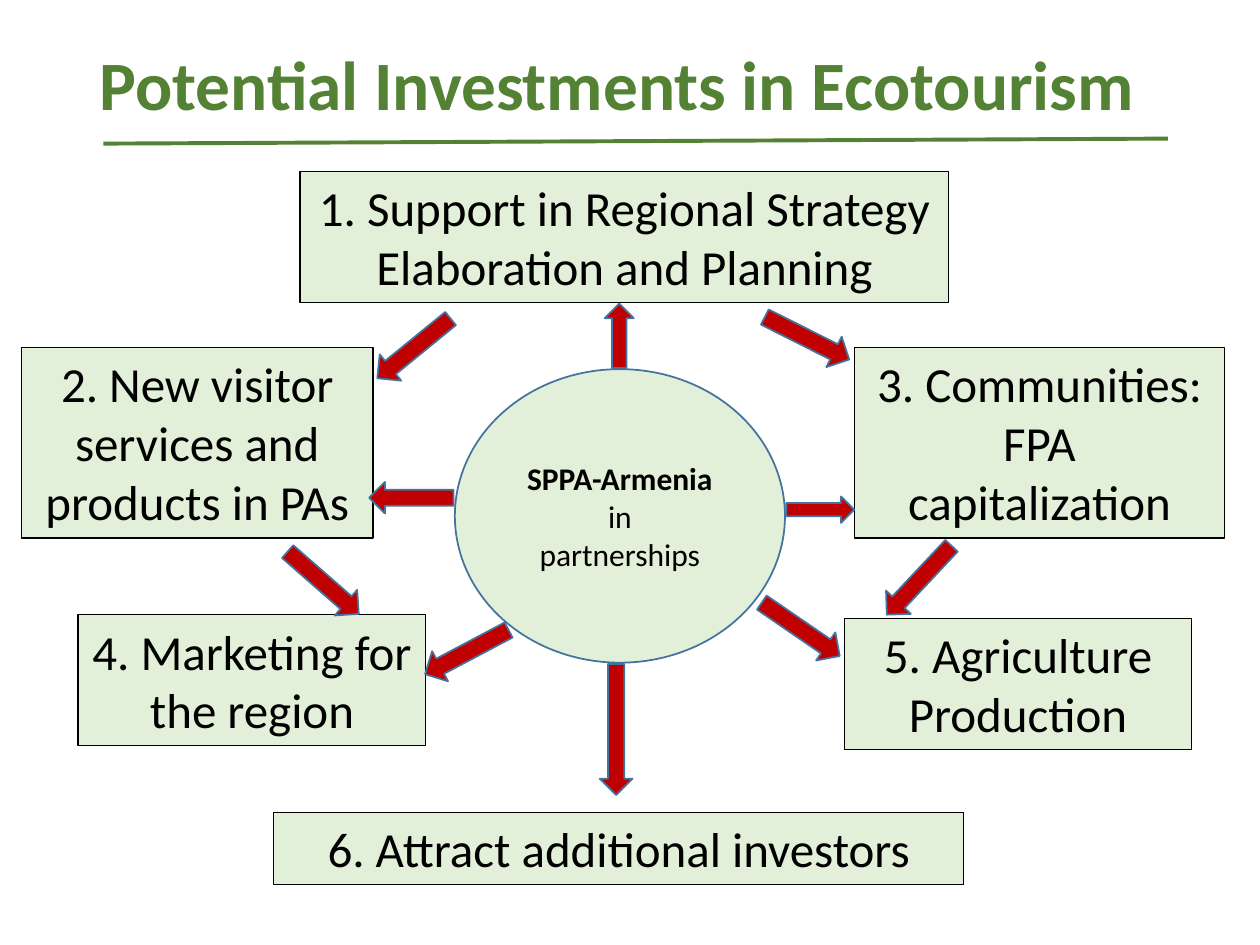
from dataclasses import dataclass

from lxml.etree import SubElement
from pptx import Presentation
from pptx.dml.color import RGBColor
from pptx.enum.shapes import MSO_CONNECTOR, MSO_SHAPE
from pptx.enum.text import MSO_ANCHOR, MSO_AUTO_SIZE, PP_ALIGN
from pptx.oxml.ns import qn
from pptx.util import Inches, Pt


@dataclass(frozen=True)
class Theme:
    """Colours, font and type sizes of the slide."""
    font: str = "Calibri"
    green: str = "548235"
    pale: str = "E2F0D9"
    black: str = "000000"
    red: str = "C00000"
    blue: str = "43739E"
    title_size: float = 39.6
    box_size: float = 28
    hub_size: float = 18


T = Theme()
CELL = Inches(0.1)

BOXES = [
    ("1. Support in Regional Strategy Elaboration and Planning", 23.8, 13.6, 51.5, 10.4),
    ("2. New visitor services and products in PAs", 1.7, 27.6, 27.9, 15.1),
    ("3. Communities: FPA capitalization", 67.8, 27.6, 29.4, 15.1),
    ("4. Marketing for the region", 6.2, 48.8, 27.6, 10.4),
    ("5. Agriculture Production", 67, 49.1, 27.6, 10.4),
    ("6. Attract additional investors", 21.7, 64.5, 54.8, 5.7),
]

ARROWS = [
    (49.15, 26.65, 5.1, 2.3, 270),
    (32.65, 39.5, 6.7, 2.5, 180),
    (65.1, 40.45, 5.4, 2.1, 0),
    (48.9, 57.9, 10.4, 2.6, 90),
]

SLANTED = [
    (32.85, 27.65, 140.8),
    (64.05, 26.85, 26.7),
    (25.65, 46.25, 41.2),
    (37.05, 51.75, 152.1),
    (72.95, 46.05, 133.2),
    (63.55, 49.95, 34.4),
]


def grid(*cells):
    """Turn grid columns and rows into lengths."""
    return [round(c * CELL) for c in cells]


def colour(name):
    """Return the colour for a hex value."""
    return RGBColor.from_string(name)


def style_text(p, size, tint, bold=False):
    """Format every run of a paragraph."""
    for r in p.runs:
        r.font.name = T.font
        r.font.size = Pt(size)
        r.font.bold = bold
        r.font.color.rgb = colour(tint)


def add_figure(s, kind, place, fill, line, width):
    """Add a filled and outlined preset shape."""
    sp = s.shapes.add_shape(kind, *grid(*place))
    sp.shadow.inherit = False
    sp.fill.solid()
    sp.fill.fore_color.rgb = colour(fill)
    sp.line.color.rgb = colour(line)
    sp.line.width = Pt(width)
    return sp


def add_title(s, text):
    """Fill and place the title with its rule below."""
    sp = s.shapes.title
    sp.left, sp.top, sp.width, sp.height = grid(6.9, 2.9, 86.2, 8.1)
    tf = sp.text_frame
    tf.text = text
    tf.auto_size = MSO_AUTO_SIZE.NONE
    tf.vertical_anchor = MSO_ANCHOR.MIDDLE
    p = tf.paragraphs[0]
    p.alignment = PP_ALIGN.LEFT
    p.line_spacing = 0.9
    style_text(p, T.title_size, T.green, True)
    rule = s.shapes.add_connector(MSO_CONNECTOR.STRAIGHT, *grid(8.2, 11.4, 92.7, 11))
    rule.line.color.rgb = colour(T.green)
    rule.line.width = Pt(2.25)
    SubElement(rule._element.spPr, qn("a:effectLst"))


def add_box(s, text, *place):
    """Add a numbered investment box."""
    sp = add_figure(s, MSO_SHAPE.RECTANGLE, place, T.pale, T.black, 0.75)
    tf = sp.text_frame
    tf.text = text
    tf.word_wrap = True
    tf.auto_size = MSO_AUTO_SIZE.SHAPE_TO_FIT_TEXT
    tf.vertical_anchor = MSO_ANCHOR.TOP
    p = tf.paragraphs[0]
    p.alignment = PP_ALIGN.CENTER
    style_text(p, T.box_size, T.black)


def add_hub(s, lines, *place):
    """Add the central ellipse with a bold first line."""
    sp = add_figure(s, MSO_SHAPE.OVAL, place, T.pale, T.blue, 1)
    tf = sp.text_frame
    tf.text = "\n".join(lines)
    tf.word_wrap = True
    tf.vertical_anchor = MSO_ANCHOR.MIDDLE
    for i, p in enumerate(tf.paragraphs):
        p.alignment = PP_ALIGN.CENTER
        style_text(p, T.hub_size, T.black, i == 0)


def add_arrow(s, x, y, length, thick, angle):
    """Add a block arrow turned about its centre."""
    place = (x - length / 2, y - thick / 2, length, thick)
    sp = add_figure(s, MSO_SHAPE.RIGHT_ARROW, place, T.red, T.blue, 1)
    sp.rotation = angle


def main():
    """Build the slide and save it."""
    prs = Presentation()
    prs.slide_width, prs.slide_height = grid(100, 75)
    s = prs.slides.add_slide(prs.slide_layouts[5])
    add_title(s, "Potential Investments in Ecotourism")
    for box in BOXES:
        add_box(s, *box)
    add_hub(s, ["SPPA-Armenia", "in", "partnerships"], 36.1, 29.3, 26.2, 23.3)
    for arrow in ARROWS:
        add_arrow(s, *arrow)
    for x, y, angle in SLANTED:
        add_arrow(s, x, y, 7.5, 2.7, angle)
    prs.save("out.pptx")


if __name__ == "__main__":
    main()
